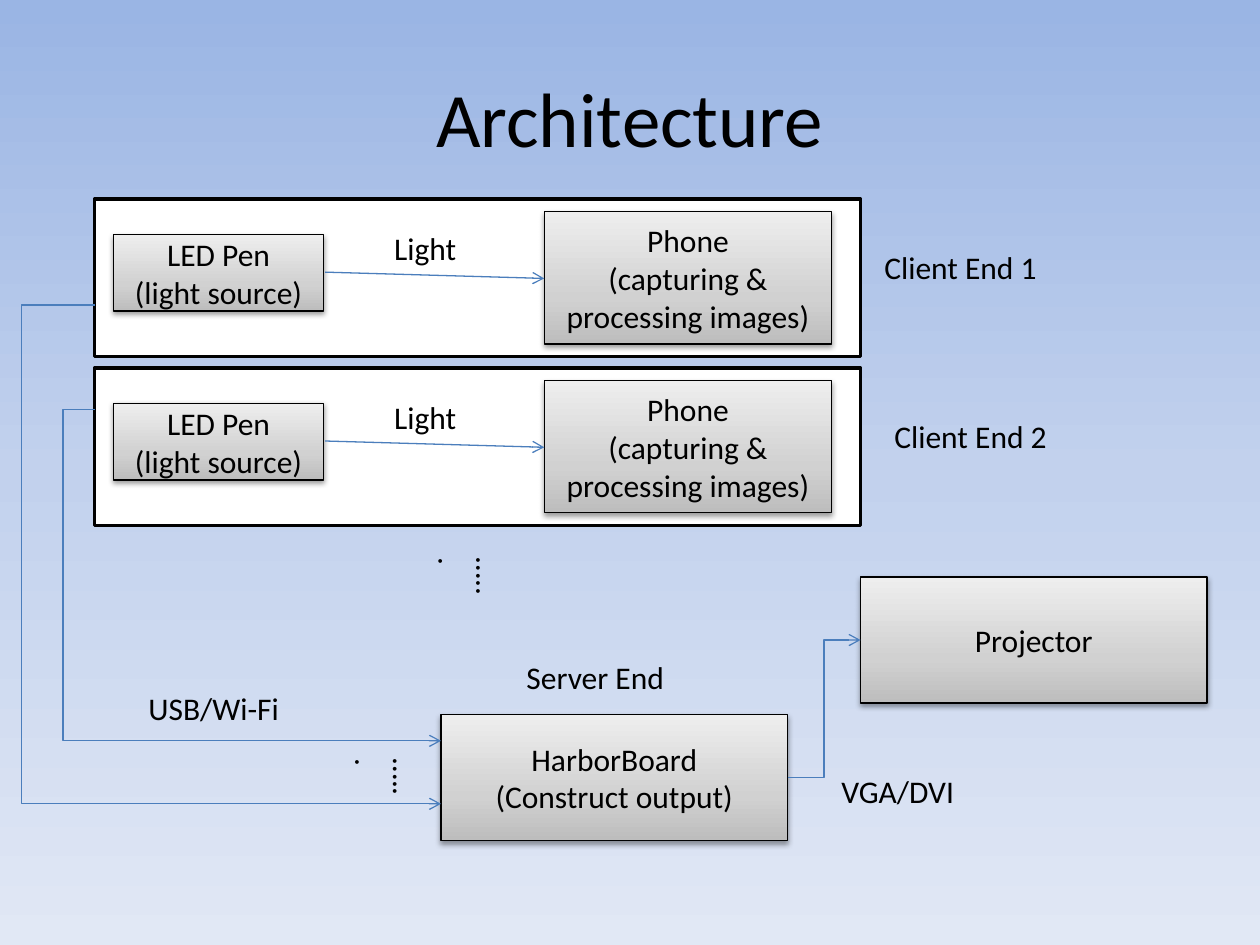
import pptx
import pptx.util
import pptx.dml.color
import pptx.enum.shapes
import pptx.enum.text
import pptx.oxml
import pptx.oxml.ns
import lxml.etree

Inches, Pt = pptx.util.Inches, pptx.util.Pt
RGB = pptx.dml.color.RGBColor.from_string
SHAPE = pptx.enum.shapes.MSO_SHAPE
CONN = pptx.enum.shapes.MSO_CONNECTOR
ALIGN = pptx.enum.text.PP_ALIGN
ANCHOR = pptx.enum.text.MSO_ANCHOR
FIT = pptx.enum.text.MSO_AUTO_SIZE
qn = pptx.oxml.ns.qn

# Content: text with its left, top, width, height in inches
FONT = "Calibri"
COLORS = {"text": "000000", "panel": "FFFFFF", "arrow": "4B7EBC"}
SKY = [(0, "9AB5E4"), (50, "C2D1ED"), (100, "E1E8F5")]
METAL = [(0, "BDBDBD"), (35, "D1D1D1"), (100, "EEEEEE")]

TITLE = "Architecture"
CLIENTS = [("Client End 1", 6.92), ("Client End 2", 7.0)]
CLIENT_TOP, CLIENT_PITCH = 1.58, 1.34
CLIENT_BOXES = [
    ("Phone\n(capturing & processing images)", (4.32, 0.1, 2.28, 1.05)),
    ("LED Pen\n(light source)", (0.9, 0.28, 1.67, 0.61)),
]
BOXES = [
    ("HarborBoard\n(Construct output)", (3.5, 5.67, 2.75, 1)),
    ("Projector", (6.83, 4.58, 2.75, 1)),
]
LABELS = [
    ("Server End", (4.08, 5.17, 1.58, 0.4)),
    ("USB/Wi-Fi", (1.08, 5.42, 1.67, 0.4)),
    ("VGA/DVI", (6.58, 6.08, 1.17, 0.4)),
]
DOTS = [("…...", (3.58, 4.33, 0.5, 0.5)), ("…...", (2.92, 5.92, 0.5, 0.5))]
# Start, end, and x of the upright part
ELBOWS = [
    ((0.75, 2.42), (3.5, 6.38), 0.17),
    ((0.75, 3.25), (3.5, 5.88), 0.5),
    ((6.25, 6.17), (6.83, 5.08), 6.54),
]


def add_xml(parent, tag, **attrs):
    return lxml.etree.SubElement(parent, qn(tag), attrs)


def set_gradient(fill, element, stops, angle):
    fill.gradient()
    fill.gradient_angle = angle
    gs_list = element.xpath(".//a:gsLst")[0]
    for old in list(gs_list):
        gs_list.remove(old)
    for pos, color in stops:
        gs = add_xml(gs_list, "a:gs", pos=str(pos * 1000))
        add_xml(gs, "a:srgbClr", val=color)


def write(tf, text, align=None):
    tf.word_wrap = True
    tf.text = text
    for p in tf.paragraphs:
        p.alignment = align
        for r in p.runs:
            r.font.name, r.font.size = FONT, Pt(18)
            r.font.color.rgb = RGB(COLORS["text"])


def add_rect(slide, at, line_width):
    sp = slide.shapes.add_shape(SHAPE.RECTANGLE, *map(Inches, at))
    sp.shadow.inherit = False
    sp.line.color.rgb = RGB(COLORS["text"])
    sp.line.width = Pt(line_width)
    return sp


def add_box(slide, text, at):
    sp = add_rect(slide, at, 0.75)
    set_gradient(sp.fill, sp._element, METAL, 90)
    effects = sp._element.spPr.find(qn("a:effectLst"))
    shadow = add_xml(effects, "a:outerShdw", blurRad=str(Pt(3.1)),
                     dist=str(Pt(1.6)), dir="5400000", rotWithShape="0")
    color = add_xml(shadow, "a:srgbClr", val=COLORS["text"])
    add_xml(color, "a:alpha", val="38000")
    sp.text_frame.vertical_anchor = ANCHOR.MIDDLE
    write(sp.text_frame, text, ALIGN.CENTER)


def add_label(slide, text, at, vertical=False):
    tf = slide.shapes.add_textbox(*map(Inches, at)).text_frame
    write(tf, text)
    tf.auto_size = FIT.SHAPE_TO_FIT_TEXT
    if vertical:
        tf._txBody.bodyPr.set("vert", "eaVert")


def add_arrow(slide, start, end, bend_x=None):
    kind = CONN.STRAIGHT if bend_x is None else CONN.ELBOW
    cxn = slide.shapes.add_connector(kind, *map(Inches, start + end))
    cxn.line.color.rgb = RGB(COLORS["arrow"])
    cxn.line.width = Pt(0.75)
    add_xml(cxn.line._get_or_add_ln(), "a:tailEnd", type="arrow")
    sp_pr = cxn._element.spPr
    add_xml(sp_pr, "a:effectLst")
    if bend_x is not None:
        share = (bend_x - start[0]) / (end[0] - start[0])
        guides = sp_pr.find(qn("a:prstGeom")).get_or_add_avLst()
        add_xml(guides, "a:gd", name="adj1", fmla=f"val {round(share * 100000)}")


def add_client(slide, top, name, name_left):
    panel = add_rect(slide, (0.75, top, 6.08, 1.25), 2)
    panel.fill.solid()
    panel.fill.fore_color.rgb = RGB(COLORS["panel"])
    for text, (left, offset, width, height) in CLIENT_BOXES:
        add_box(slide, text, (left, top + offset, width, height))
    add_arrow(slide, (2.58, top + 0.58), (4.32, top + 0.63))
    add_label(slide, "Light", (3.03, top + 0.19, 0.76, 0.42))
    add_label(slide, name, (name_left, top + 0.34, 1.58, 0.4))


def main():
    prs = pptx.Presentation()
    prs.slide_width, prs.slide_height = Inches(10), Inches(7.5)
    slide = prs.slides.add_slide(prs.slide_layouts[5])
    set_gradient(slide.background.fill, slide._element, SKY, 270)

    # Title
    title = slide.shapes.title
    title.left, title.top, title.width, title.height = map(Inches, (0.5, 0.3, 9, 1.25))
    write(title.text_frame, TITLE, ALIGN.CENTER)
    title.text_frame.vertical_anchor = ANCHOR.MIDDLE
    title.text_frame.paragraphs[0].runs[0].font.size = Pt(44)

    # Clients, one panel each
    for i, (name, name_left) in enumerate(CLIENTS):
        add_client(slide, CLIENT_TOP + i * CLIENT_PITCH, name, name_left)

    # Server, projector and their links
    for text, at in BOXES:
        add_box(slide, text, at)
    for start, end, bend_x in ELBOWS:
        add_arrow(slide, start, end, bend_x)
    for text, at in LABELS:
        add_label(slide, text, at)
    for text, at in DOTS:
        add_label(slide, text, at, vertical=True)

    prs.save("out.pptx")


if __name__ == "__main__":
    main()
